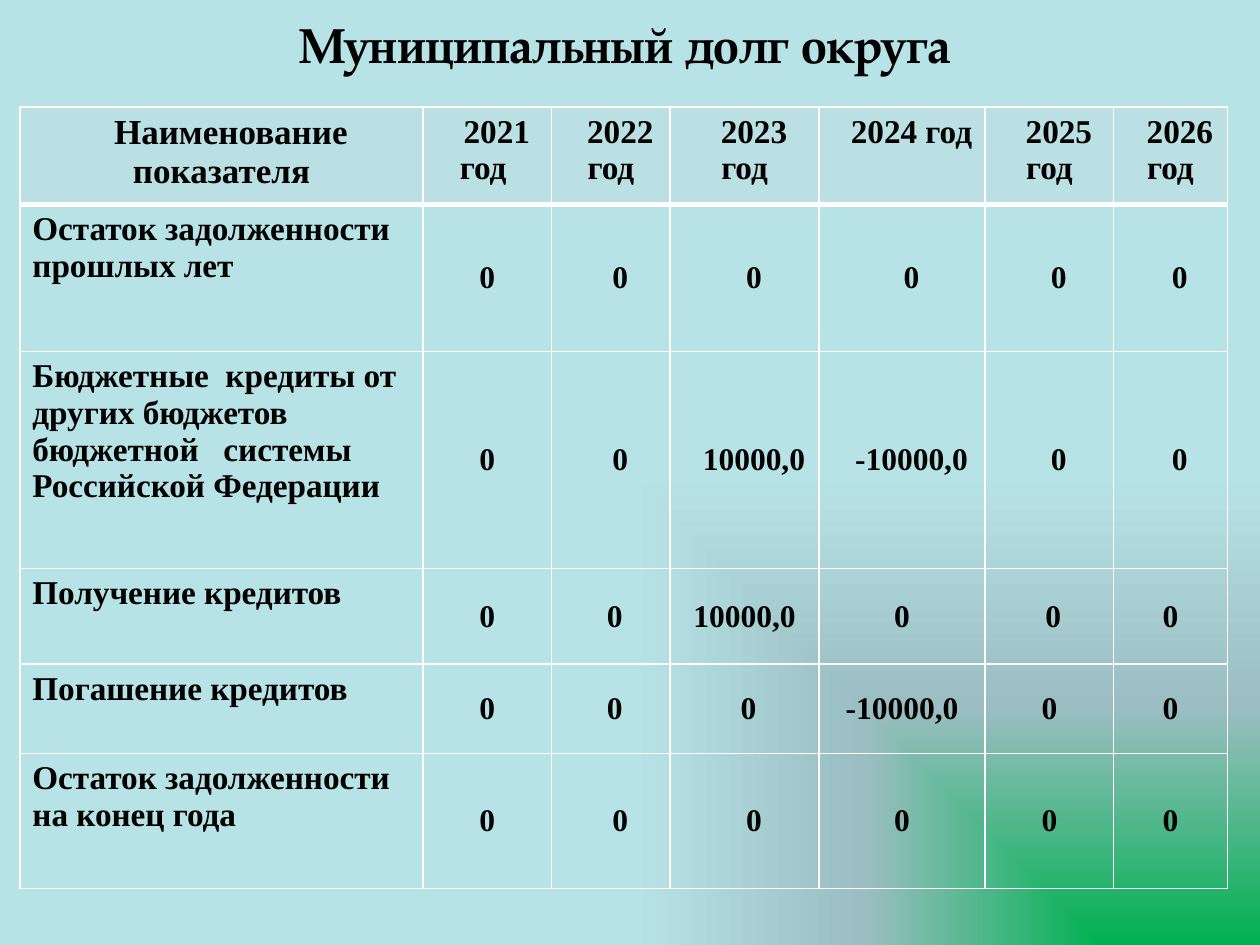
from dataclasses import dataclass

from lxml.etree import SubElement
from pptx import Presentation
from pptx.dml.color import RGBColor
from pptx.enum.text import MSO_ANCHOR, PP_ALIGN
from pptx.oxml import parse_xml
from pptx.oxml.ns import nsdecls, qn
from pptx.slide import Slide
from pptx.util import Cm, Pt

GRADIENT = ((0, "00B050"), (50, "9ABEC1"), (100, "B8E3E6"))
COLUMN_WIDTHS = (8.13, 2.59, 2.39, 3, 3.35, 2.59, 2.29)
ROW_HEIGHTS = (1.96, 2.97, 4.37, 1.93, 1.8, 2.72)
ROWS = (
    ("Наименование показателя", "2021 год ", "2022 год", "2023 год", "2024 год ", "2025 год", "2026 год"),
    ("Остаток задолженности  прошлых лет", "0", "0", "0", "0", "0", "0"),
    ("Бюджетные  кредиты от других бюджетов бюджетной   системы Российской Федерации",
     "0", "0", "10000,0", "-10000,0", "0", "0"),
    ("Получение кредитов", "0", " 0", "10000,0", "0", " 0", "0"),
    ("Погашение кредитов", "0", " 0", " 0", "-10000,0", "0", "0"),
    ("Остаток задолженности на конец года", "0", "0", "0", "0", "0", "0"),
)
INDENTED_COLUMNS = {0: range(7), 1: range(2, 7), 2: range(2, 7), 5: range(2, 4)}


def color(value):
    return RGBColor.from_string(value)


@dataclass
class DebtSlide:
    """Style and drawing methods for the municipal debt slide."""

    slide: Slide
    title_font: str = "TeX Gyre Pagella"
    table_font: str = "Times New Roman"
    text_color: str = "000000"
    header_fill: str = "BBE0E3"
    border_color: str = "FFFFFF"

    def background(self, stops):
        fill = self.slide.background.fill
        fill.solid()
        properties = self.slide.element.cSld.find(qn("p:bg")).find(qn("p:bgPr"))
        stop_xml = "".join(
            f'<a:gs pos="{position * 1000}"><a:srgbClr val="{value}"/></a:gs>' for position, value in stops
        )
        gradient = parse_xml(
            f'<a:gradFill {nsdecls("a")} rotWithShape="1"><a:gsLst>{stop_xml}</a:gsLst>'
            '<a:path path="rect"><a:fillToRect l="100000" t="100000"/></a:path></a:gradFill>'
        )
        properties.replace(properties.find(qn("a:solidFill")), gradient)

    def text(self, text_frame, text, font, size, alignment, indent=0):
        paragraph = text_frame.paragraphs[0]
        paragraph.alignment = alignment
        if indent:
            paragraph._p.get_or_add_pPr().set("indent", str(Cm(indent)))
        run = paragraph.add_run()
        run.text = text
        run.font.name = font
        run.font.size = Pt(size)
        run.font.bold = True
        run.font.color.rgb = color(self.text_color)

    def title(self, text, left, top, width, height):
        shape = self.slide.shapes.add_textbox(Cm(left), Cm(top), Cm(width), Cm(height))
        shape.text_frame.word_wrap = True
        shape.text_frame.vertical_anchor = MSO_ANCHOR.MIDDLE
        self.text(shape.text_frame, text, self.title_font, 28, PP_ALIGN.CENTER)

    def borders(self, cell, top, bottom):
        properties = cell._tc.get_or_add_tcPr()
        for position, (side, width) in enumerate((("L", 1), ("R", 1), ("T", top), ("B", bottom))):
            line = SubElement(properties, qn(f"a:ln{side}"), w=str(Pt(width)))
            SubElement(SubElement(line, qn("a:solidFill")), qn("a:srgbClr"), val=self.border_color)
            properties.insert(position, line)

    def cell(self, cell, text, row, column):
        is_header, is_label = row == 0, column == 0
        if is_header:
            cell.fill.solid()
            cell.fill.fore_color.rgb = color(self.header_fill)
        else:
            cell.fill.background()
        self.borders(cell, 3 if row == 1 else 1, 3 if is_header else 1)
        cell.vertical_anchor = MSO_ANCHOR.TOP if is_header or is_label else MSO_ANCHOR.MIDDLE
        size = 20 if is_header and is_label else 19 if is_header or is_label else 18
        alignment = PP_ALIGN.LEFT if is_label and not is_header else PP_ALIGN.CENTER
        indent = 0.38 if column in INDENTED_COLUMNS.get(row, ()) else 0
        self.text(cell.text_frame, text, self.table_font, size, alignment, indent)

    def table(self, rows, widths, heights, left, top):
        table = self.slide.shapes.add_table(
            len(rows), len(widths), Cm(left), Cm(top), Cm(sum(widths)), Cm(sum(heights))
        ).table
        table.horz_banding = False
        for column, width in zip(table.columns, widths):
            column.width = Cm(width)
        for table_row, height in zip(table.rows, heights):
            table_row.height = Cm(height)
        for row, texts in enumerate(rows):
            for column, text in enumerate(texts):
                self.cell(table.cell(row, column), text, row, column)


def main():
    presentation = Presentation()
    presentation.slide_width, presentation.slide_height = Cm(25.4), Cm(19.05)
    debt = DebtSlide(presentation.slides.add_slide(presentation.slide_layouts[6]))
    debt.background(GRADIENT)
    debt.title("Муниципальный долг округа", 0.58, 0, 24.05, 1.78)
    debt.table(ROWS, COLUMN_WIDTHS, ROW_HEIGHTS, 0.4, 2.16)
    presentation.save("out.pptx")


if __name__ == "__main__":
    main()
